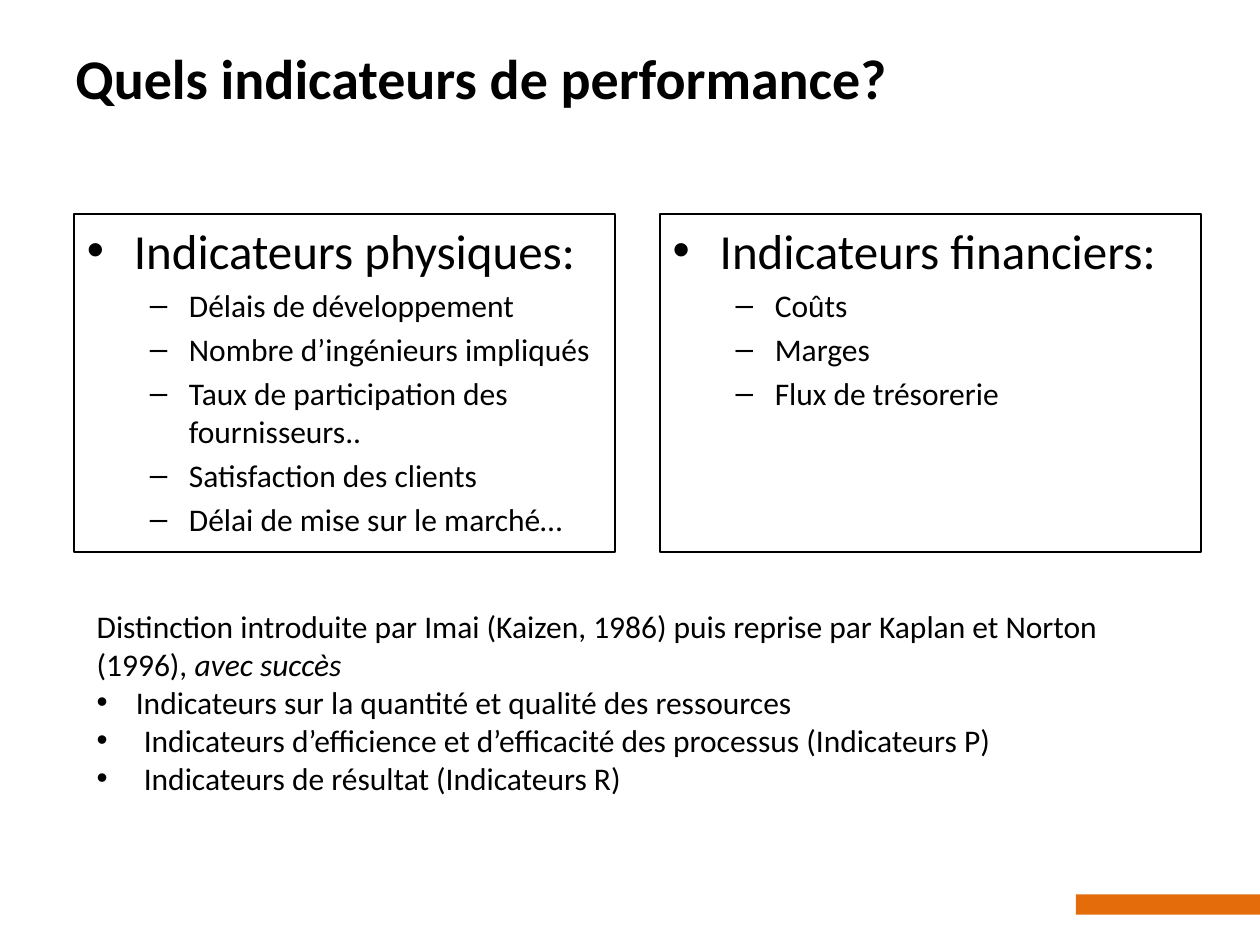
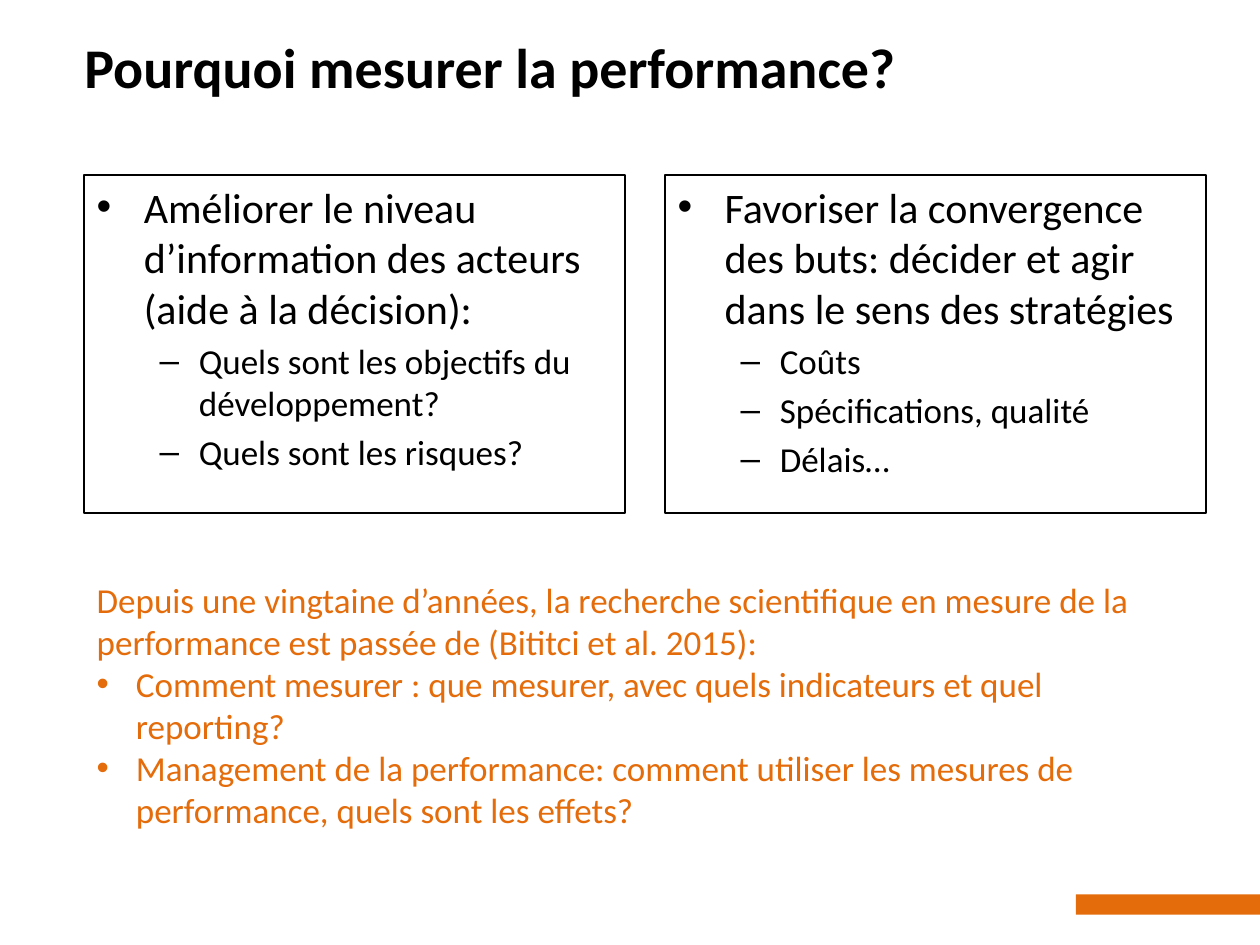
import pptx
import pptx.dml.color
import pptx.enum.shapes
import pptx.enum.text
import pptx.oxml.ns
import pptx.util
from lxml import etree

Cm = pptx.util.Cm
Pt = pptx.util.Pt

COLORS = {"text": "000000", "accent": "E46C0A"}
FONT = "Calibri"
BOX_WIDTH, BOX_HEIGHT = 10.9, 6.81
NOTE_LEFT, NOTE_WIDTH = 1.7, 22.6
HEADING_INDENT = 0.95
POINT_LEFT, POINT_INDENT = 2.06, 0.79
NOTE_INDENT = 0.79


def rgb(name):
    return pptx.dml.color.RGBColor.from_string(COLORS[name])


class Deck:
    def __init__(self):
        self.prs = pptx.Presentation()
        self.prs.slide_width, self.prs.slide_height = Cm(25.4), Cm(19.05)
        self.slide = None

    def new_slide(self):
        """Start a blank slide with the accent band at its lower right."""
        self.slide = self.prs.slides.add_slide(self.prs.slide_layouts[6])
        band = self.slide.shapes.add_shape(
            pptx.enum.shapes.MSO_SHAPE.RECTANGLE,
            Cm(21.69), Cm(18.03), Cm(3.71), Cm(0.41))
        band.shadow.inherit = False
        band.fill.solid()
        band.fill.fore_color.rgb = rgb("accent")
        band.line.fill.background()

    def text_box(self, left, top, width, height):
        box = self.slide.shapes.add_textbox(
            Cm(left), Cm(top), Cm(width), Cm(height))
        box.text_frame.word_wrap = True
        return box

    def paragraph(self, frame, runs, size, color="text", bold=None,
                  bullet=None, left=0, indent=0, level=0, before=0):
        """Add a paragraph; runs holds (text, italic) pairs or is one string."""
        first = frame.paragraphs[0]
        para = first if not first.runs else frame.add_paragraph()
        if bullet:
            props = para._p.get_or_add_pPr()
            props.set("marL", str(Cm(left)))
            props.set("indent", str(-Cm(indent)))
            for tag, key, value in (("a:buFont", "typeface", "Arial"),
                                    ("a:buChar", "char", bullet)):
                etree.SubElement(props, pptx.oxml.ns.qn(tag)).set(key, value)
        para.level = level
        para.space_before = Pt(before)
        para.font.name = FONT
        para.font.size = Pt(size)
        para.font.bold = bold
        para.font.color.rgb = rgb(color)
        for text, italic in [(runs, None)] if isinstance(runs, str) else runs:
            run = para.add_run()
            run.text = text
            run.font.italic = italic

    def title(self, text, left, top, height):
        box = self.text_box(left, top, 22.86, height)
        self.paragraph(box.text_frame, text, 32, bold=True)

    def topic_box(self, left, top, heading, points, heading_size, point_size):
        box = self.text_box(left, top, BOX_WIDTH, BOX_HEIGHT)
        box.line.color.rgb = rgb("text")
        box.line.width = Pt(1)
        self.paragraph(box.text_frame, heading, heading_size, bullet="•",
                       left=HEADING_INDENT, indent=HEADING_INDENT,
                       before=heading_size * 0.2)
        for point in points:
            self.paragraph(box.text_frame, point, point_size, bullet="–",
                           left=POINT_LEFT, indent=POINT_INDENT, level=1,
                           before=point_size * 0.2)

    def note(self, top, height, intro, points, size, color="text"):
        """Add closing text; points holds (text, hanging indent) pairs."""
        box = self.text_box(NOTE_LEFT, top, NOTE_WIDTH, height)
        box.text_frame.auto_size = (
            pptx.enum.text.MSO_AUTO_SIZE.SHAPE_TO_FIT_TEXT)
        self.paragraph(box.text_frame, intro, size, color)
        for point, indent in points:
            self.paragraph(box.text_frame, point, size, color, bullet="•",
                           left=indent, indent=indent)


def indicators_slide(deck):
    deck.new_slide()
    deck.title("Quels indicateurs de performance?", 1.27, 0.76, 3.18)
    topics = (
        (1.5, "Indicateurs physiques:",
         ("Délais de développement", "Nombre d’ingénieurs impliqués",
          "Taux de participation des fournisseurs..",
          "Satisfaction des clients", "Délai de mise sur le marché…")),
        (13.31, "Indicateurs financiers:",
         ("Coûts", "Marges", "Flux de trésorerie")),
    )
    for left, heading, points in topics:
        deck.topic_box(left, 4.32, heading, points, 28, 18)
    intro = (("Distinction introduite par Imai (Kaizen, 1986) puis reprise "
              "par Kaplan et Norton (1996), ", None), ("avec succès", True))
    deck.note(12.12, 4.11, intro, (
        ("Indicateurs sur la quantité et qualité des ressources", NOTE_INDENT),
        ("Indicateurs d’efficience et d’efficacité des processus "
         "(Indicateurs P)", HEADING_INDENT),
        ("Indicateurs de résultat (Indicateurs R)", HEADING_INDENT),
    ), 18)


def reasons_slide(deck):
    deck.new_slide()
    deck.title("Pourquoi mesurer la performance?", 1.45, 0.53, 2.57)
    topics = (
        (1.7, "Améliorer le niveau d’information des acteurs "
         "(aide à la décision):",
         ("Quels sont les objectifs du développement?",
          "Quels sont les risques?")),
        (13.41, "Favoriser la convergence des buts: décider et agir "
         "dans le sens des stratégies",
         ("Coûts", "Spécifications, qualité", "Délais…")),
    )
    for left, heading, points in topics:
        deck.topic_box(left, 3.53, heading, points, 24, 20)
    intro = ("Depuis une vingtaine d’années, la recherche scientifique en "
             "mesure de la performance est passée de (Bititci et al. 2015):")
    deck.note(11.53, 5.38, intro, (
        ("Comment mesurer : que mesurer, avec quels indicateurs et quel "
         "reporting?", NOTE_INDENT),
        ("Management de la performance: comment utiliser les mesures de "
         "performance, quels sont les effets?", NOTE_INDENT),
    ), 20, "accent")


def main():
    deck = Deck()
    indicators_slide(deck)
    reasons_slide(deck)
    deck.prs.save("out.pptx")


if __name__ == "__main__":
    main()
